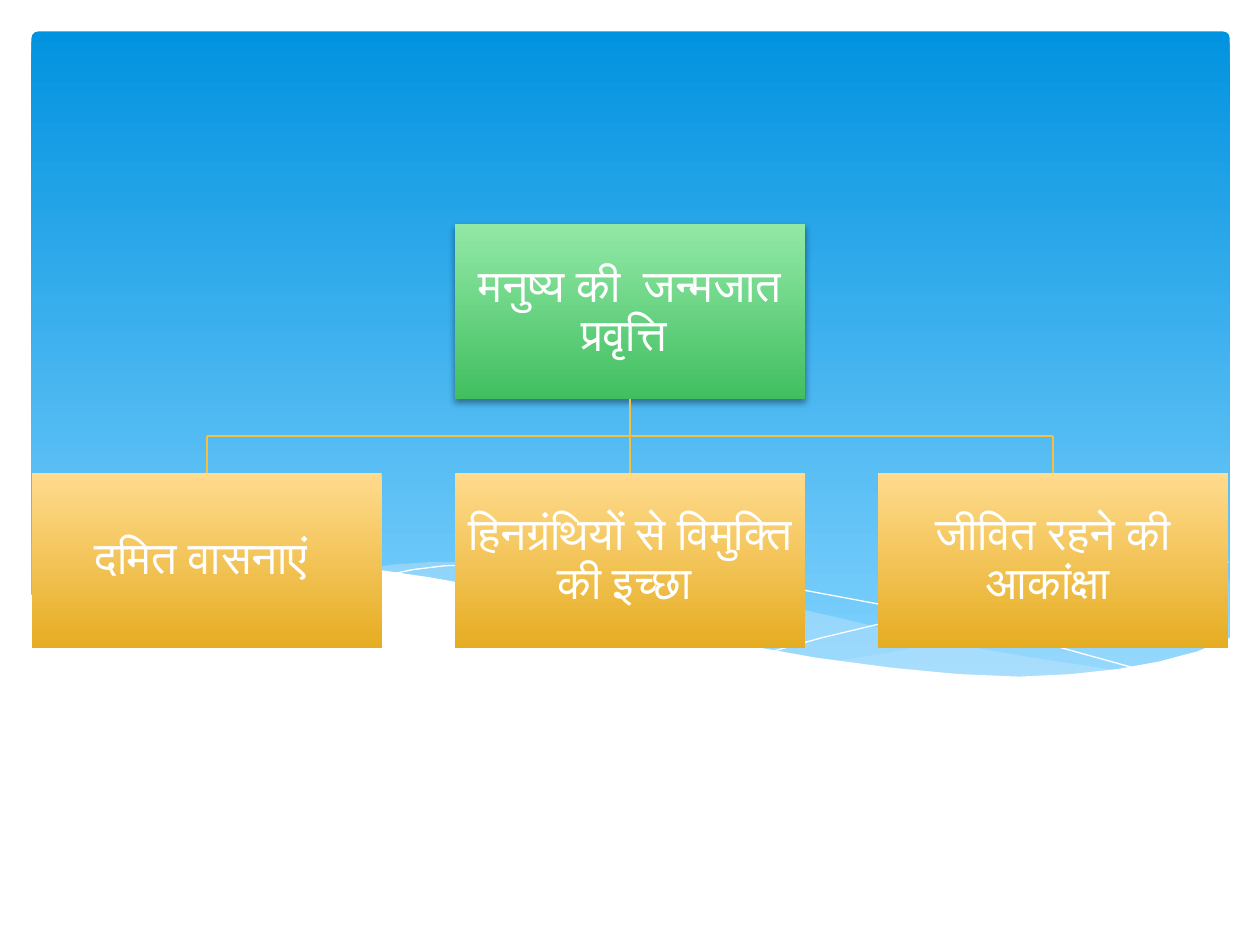
from dataclasses import dataclass

from lxml import etree
from pptx import Presentation
from pptx.dml.color import RGBColor
from pptx.enum.shapes import MSO_CONNECTOR, MSO_SHAPE
from pptx.enum.text import MSO_ANCHOR, PP_ALIGN
from pptx.oxml.ns import qn
from pptx.util import Inches, Pt

STRAIGHT = MSO_CONNECTOR.STRAIGHT
RECTANGLE = MSO_SHAPE.RECTANGLE
ROUNDED = MSO_SHAPE.ROUNDED_RECTANGLE
MIDDLE = MSO_ANCHOR.MIDDLE
CENTER = PP_ALIGN.CENTER
TOP, BOTTOM = 0, 2

GRID_COLUMNS, GRID_ROWS = 10, 7.5
MARGIN = 0.25
BOX_WIDTH, BOX_HEIGHT, GAP = 2.78, 1.39, 0.58
ROOT_TOP = 1.78
BRANCH_TOP = ROOT_TOP + BOX_HEIGHT + GAP
BUS_ROW = BRANCH_TOP - GAP / 2

ROOT_LABEL = "मनुष्य की  जन्मजात प्रवृत्ति "
BRANCH_LABELS = ("दमित वासनाएं ", "हिनग्रंथियों से विमुक्ति की इच्छा ", "जीवित रहने की आकांक्षा ")

RIGHT_SWELL = [
    (9.76, 4.6), (9.48, 4.64), (9.21, 4.7), (8.91, 4.76), (8.61, 4.83), (8.05, 4.97),
    (7.53, 5.08), (7.06, 5.18), (6.61, 5.25), (6.91, 5.3), (7.19, 5.33), (7.45, 5.35),
    (7.69, 5.37), (8.03, 5.38), (8.35, 5.37), (8.63, 5.35), (8.89, 5.32), (9.13, 5.27),
    (9.35, 5.22), (9.63, 5.12), (9.76, 5.07)]
LONG_SWELL = [
    (8.93, 5.33), (8.66, 5.29), (8.07, 5.2), (7.41, 5.08), (6.68, 4.91), (6.29, 4.82),
    (5.84, 4.71), (5.41, 4.63), (5.02, 4.56), (4.65, 4.51), (4.2, 4.47), (3.8, 4.46),
    (3.44, 4.46), (3.13, 4.48), (2.86, 4.52), (3.23, 4.56), (3.62, 4.63), (4.04, 4.71),
    (4.49, 4.82), (5.3, 5.01), (5.84, 5.12), (6.34, 5.21), (6.8, 5.28), (7.22, 5.34),
    (7.61, 5.37), (8.07, 5.39), (8.48, 5.38), (8.76, 5.35)]
FALLING_CREST = [
    (3.09, 4.56), (3.28, 4.52), (3.53, 4.49), (3.87, 4.48), (4.16, 4.47), (4.5, 4.48),
    (4.89, 4.5), (5.33, 4.54), (5.82, 4.6), (6.36, 4.68), (6.95, 4.79), (7.6, 4.93),
    (8.31, 5.11), (9.07, 5.32)]
RISING_CREST = [
    (6.13, 5.17), (6.53, 5.06), (6.95, 4.96), (7.48, 4.83), (8.06, 4.7), (8.66, 4.59),
    (8.95, 4.54), (9.24, 4.5), (9.51, 4.47), (9.75, 4.46)]
WHITE_SHORE = [
    (9.77, 5.06), (9.5, 5.17), (9.2, 5.25), (8.87, 5.31), (8.5, 5.35), (8.09, 5.37),
    (7.61, 5.35), (7.08, 5.3), (6.48, 5.22), (6.03, 5.14), (5.55, 5.05), (5.03, 4.93),
    (4.47, 4.8), (3.91, 4.67), (3.4, 4.58), (2.92, 4.51), (2.5, 4.46), (2.11, 4.44),
    (1.77, 4.44), (1.46, 4.45), (1.19, 4.48), (0.95, 4.51), (0.76, 4.55), (0.59, 4.59),
    (0.46, 4.63), (0.36, 4.67), (0.23, 4.73), (0.23, 5.89), (9.77, 5.89)]


@dataclass(frozen=True)
class Theme:
    """Colours, font and sizes of the slide."""
    sky: tuple = ("0293E0", "83D3FE")
    root: tuple = ("92E8A6", "41BF60")
    branch: tuple = ("FFDB8E", "E6AD22")
    connector: str = "F5C040"
    swell: str = "C6E7FC"
    white: str = "FFFFFF"
    shadow: str = "000000"
    font: str = "Cabin"
    label_size: float = 26
    connector_width: float = 1.25


class SlideBuilder:
    """Draws styled elements on one slide, placed in grid columns and rows."""

    def __init__(self, presentation, theme):
        self.theme = theme
        self.column = presentation.slide_width / GRID_COLUMNS
        self.row = presentation.slide_height / GRID_ROWS
        self.slide = presentation.slides.add_slide(presentation.slide_layouts[6])

    def place(self, column, row):
        """Turn grid columns and rows into slide lengths."""
        return round(column * self.column), round(row * self.row)

    def panel(self, kind, left, top, width, height, gradient):
        """Add a borderless shape with a downward gradient."""
        shape = self.slide.shapes.add_shape(
            kind, *self.place(left, top), *self.place(width, height))
        shape.shadow.inherit = False
        shape.line.fill.background()
        shape.fill.gradient()
        shape.fill.gradient_angle = 270
        for stop, color in zip(shape.fill.gradient_stops, gradient):
            stop.color.rgb = RGBColor.from_string(color)
        return shape

    def box(self, left, top, label, gradient):
        """Add a diagram box with its centred label."""
        shape = self.panel(RECTANGLE, left, top, BOX_WIDTH, BOX_HEIGHT, gradient)
        frame = shape.text_frame
        frame.word_wrap = True
        frame.vertical_anchor = MIDDLE
        frame.margin_left = frame.margin_right = Inches(0.02)
        frame.margin_top = frame.margin_bottom = Inches(0.02)
        paragraph = frame.paragraphs[0]
        paragraph.alignment = CENTER
        paragraph.line_spacing = 0.9
        run = paragraph.add_run()
        run.text = label
        run.font.name = self.theme.font
        run.font.size = Pt(self.theme.label_size)
        run.font.color.rgb = RGBColor.from_string(self.theme.white)
        return shape

    def drop_shadow(self, shape):
        """Give a shape a soft shadow below it."""
        effects = shape.element.spPr.find(qn("a:effectLst"))
        shadow = etree.SubElement(effects, qn("a:outerShdw"), blurRad=str(Pt(4)),
                                  dist=str(Pt(2)), dir="5400000", rotWithShape="0")
        color = etree.SubElement(shadow, qn("a:srgbClr"), val=self.theme.shadow)
        etree.SubElement(color, qn("a:alpha"), val="38000")

    def outline(self, points, closed):
        """Add a shape that follows the given grid points."""
        start, *others = [self.place(*point) for point in points]
        builder = self.slide.shapes.build_freeform(*start, scale=1.0)
        builder.add_line_segments(others, close=closed)
        shape = builder.convert_to_shape()
        shape.shadow.inherit = False
        return shape

    def wave(self, points, color, opacity=100):
        """Add a filled wave."""
        shape = self.outline(points, True)
        shape.line.fill.background()
        shape.fill.solid()
        shape.fill.fore_color.rgb = RGBColor.from_string(color)
        fill_color = shape.element.spPr.find(qn("a:solidFill"))[0]
        etree.SubElement(fill_color, qn("a:alpha"), val=str(opacity * 1000))

    def crest(self, points):
        """Add a hairline wave crest."""
        shape = self.outline(points, False)
        shape.fill.background()
        shape.line.color.rgb = RGBColor.from_string(self.theme.white)
        shape.line.width = 0

    def connector(self, start, end, source=None, target=None):
        """Add a line, joined to a box's bottom or top where one is given."""
        line = self.slide.shapes.add_connector(STRAIGHT, *self.place(*start), *self.place(*end))
        line.line.color.rgb = RGBColor.from_string(self.theme.connector)
        line.line.width = Pt(self.theme.connector_width)
        etree.SubElement(line.element.spPr, qn("a:effectLst"))
        if source is not None:
            line.begin_connect(source, BOTTOM)
        if target is not None:
            line.end_connect(target, TOP)


def draw_background(builder):
    """Draw the sky and its waves."""
    theme = builder.theme
    sky = builder.panel(ROUNDED, MARGIN, MARGIN, 9.51, 5.18, theme.sky)
    sky.adjustments[0] = 0.01
    builder.wave(RIGHT_SWELL, theme.swell, 29)
    builder.wave(LONG_SWELL, theme.swell, 40)
    builder.crest(FALLING_CREST)
    builder.crest(RISING_CREST)
    builder.wave(WHITE_SHORE, theme.white)


def draw_hierarchy(builder):
    """Draw the root box, its branches and the lines between them."""
    theme = builder.theme
    lefts = [MARGIN + index * (BOX_WIDTH + GAP) for index in range(len(BRANCH_LABELS))]
    centers = [left + BOX_WIDTH / 2 for left in lefts]
    root = builder.box(lefts[1], ROOT_TOP, ROOT_LABEL, theme.root)
    builder.drop_shadow(root)
    branches = [builder.box(left, BRANCH_TOP, label, theme.branch)
                for left, label in zip(lefts, BRANCH_LABELS)]
    builder.connector((centers[0], BUS_ROW), (centers[-1], BUS_ROW))
    for center, branch in zip(centers, branches):
        is_trunk = branch is branches[1]
        start_row = ROOT_TOP + BOX_HEIGHT if is_trunk else BUS_ROW
        builder.connector((center, start_row), (center, BRANCH_TOP),
                          root if is_trunk else None, branch)


def main():
    """Build and save the presentation."""
    presentation = Presentation()
    presentation.slide_width = Inches(10)
    presentation.slide_height = Inches(7.5)
    builder = SlideBuilder(presentation, Theme())
    draw_background(builder)
    draw_hierarchy(builder)
    presentation.save("out.pptx")


if __name__ == "__main__":
    main()
